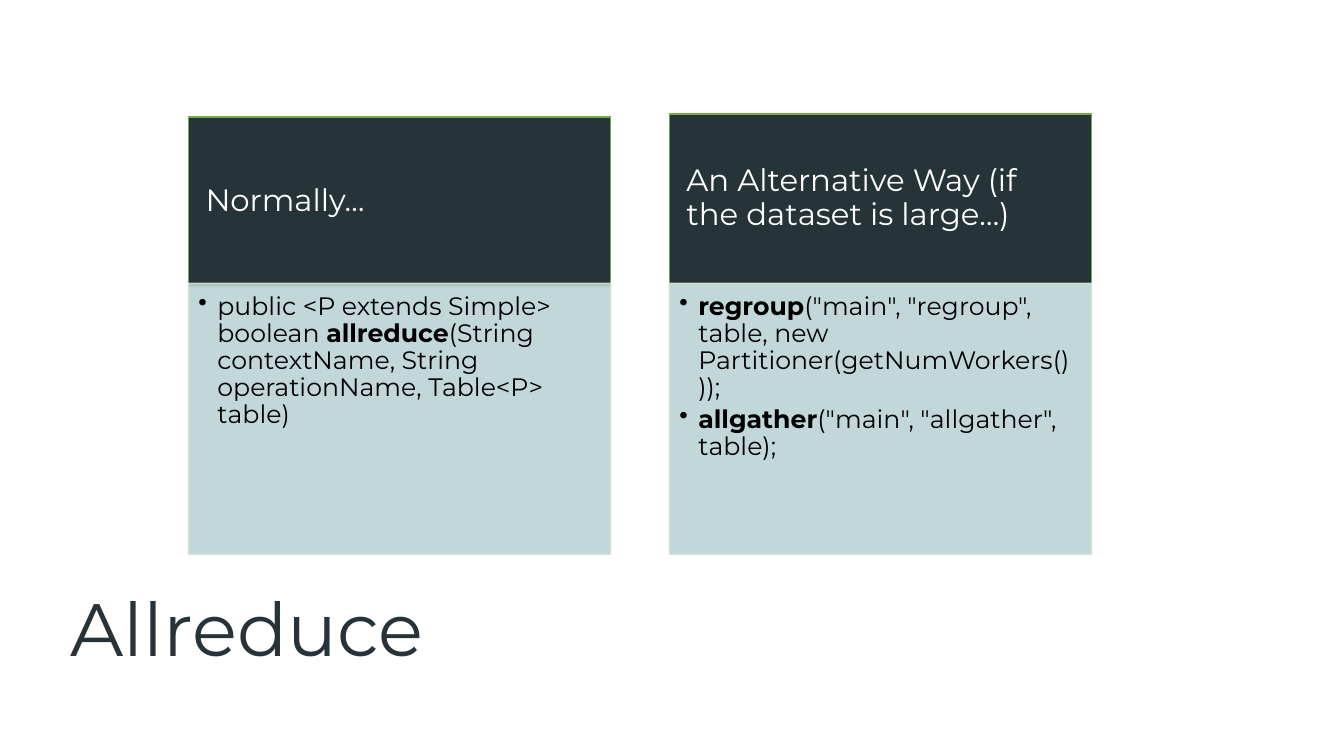
import pptx
import pptx.util
import pptx.dml.color
import pptx.enum.shapes
import pptx.enum.text
import pptx.oxml.ns
import pptx.oxml.xmlchemy

Cm = pptx.util.Cm
Pt = pptx.util.Pt
RGBColor = pptx.dml.color.RGBColor
ANCHOR = pptx.enum.text.MSO_ANCHOR

SLATE = RGBColor(0x26, 0x33, 0x38)
GREEN = RGBColor(0x70, 0xAD, 0x47)
MIST = RGBColor(0xBC, 0xD3, 0xD6)
PALE_GREEN = RGBColor(0xD5, 0xE3, 0xCF)
WHITE = RGBColor(0xFF, 0xFF, 0xFF)
BLACK = RGBColor(0x00, 0x00, 0x00)

PANEL_WIDTH = 10.64
HEADER_HEIGHT = 4.27
BODY_TOP = 7.14
BODY_HEIGHT = 6.83

PANELS = [
    (4.75, 2.95, "Normally…", [
        [("public <P extends Simple> boolean ", False),
         ("allreduce", True),
         ("(String contextName, String operationName, Table<P> table)", False)],
    ]),
    (16.87, 2.87, "An Alternative Way (if the dataset is large…)", [
        [("regroup", True),
         ('("main", "regroup", table, new Partitioner(getNumWorkers()));', False)],
        [("allgather", True), ('("main", "allgather", table);', False)],
    ]),
]


def add_block(page, left, top, height, fill, line, opacity, anchor, insets):
    box = page.shapes.add_shape(
        pptx.enum.shapes.MSO_SHAPE.RECTANGLE,
        Cm(left), Cm(top), Cm(PANEL_WIDTH), Cm(height))
    box.shadow.inherit = False
    box.fill.solid()
    box.fill.fore_color.rgb = fill
    box.line.color.rgb = line
    box.line.width = Pt(1)
    if opacity < 100:
        for color in box._element.spPr.iter(pptx.oxml.ns.qn("a:srgbClr")):
            alpha = pptx.oxml.xmlchemy.OxmlElement("a:alpha")
            alpha.set("val", str(opacity * 1000))
            color.append(alpha)
    frame = box.text_frame
    frame.word_wrap = True
    frame.vertical_anchor = anchor
    (frame.margin_left, frame.margin_top,
     frame.margin_right, frame.margin_bottom) = [Cm(inset) for inset in insets]
    return frame


def format_para(para, size, color):
    para.alignment = pptx.enum.text.PP_ALIGN.LEFT
    para.line_spacing = 0.9
    for span in para.runs:
        span.font.name = "Montserrat"
        span.font.size = Pt(size)
        span.font.color.rgb = color


deck = pptx.Presentation()
deck.slide_width = Cm(33.87)
deck.slide_height = Cm(19.05)
page = deck.slides.add_slide(deck.slide_layouts[5])

for left, header_top, heading, calls in PANELS:
    header = add_block(page, left, header_top, HEADER_HEIGHT, SLATE, GREEN, 100,
                       ANCHOR.MIDDLE, (0.43, 0.25, 0.43, 0.25))
    header.text = heading
    format_para(header.paragraphs[0], 22, WHITE)

    body = add_block(page, left, BODY_TOP, BODY_HEIGHT, MIST, PALE_GREEN, 90,
                     ANCHOR.TOP, (0.25, 0.25, 0.36, 0.41))
    body.text = "\n".join("" for call in calls)
    for para, call in zip(body.paragraphs, calls):
        for words, bold in call:
            span = para.add_run()
            span.text = words
            span.font.bold = bold
        format_para(para, 18, BLACK)
        para.space_after = Pt(3)
        properties = para._p.get_or_add_pPr()
        properties.set("marL", str(Cm(0.48)))
        properties.set("indent", str(Cm(-0.48)))
        bullet = pptx.oxml.xmlchemy.OxmlElement("a:buChar")
        bullet.set("char", "•")
        properties.append(bullet)

title = page.shapes.title
title.left, title.top, title.width, title.height = Cm(1.52), Cm(14.81), Cm(29.21), Cm(3.68)
title.text_frame.text = "Allreduce"
title.text_frame.word_wrap = True
title.text_frame.auto_size = pptx.enum.text.MSO_AUTO_SIZE.NONE
title.text_frame.vertical_anchor = ANCHOR.TOP
format_para(title.text_frame.paragraphs[0], 53, SLATE)

deck.save("out.pptx")
